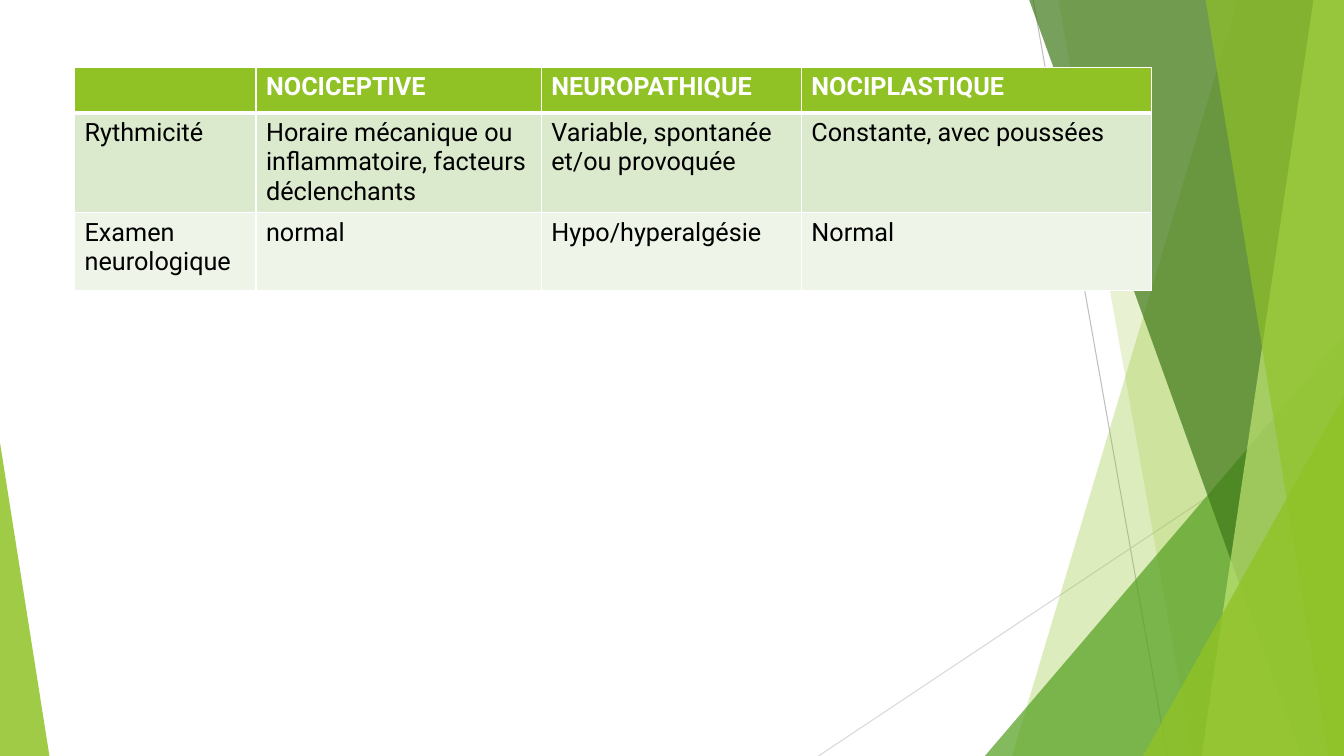
from lxml import etree
from pptx import Presentation
from pptx import util as u
from pptx.dml.color import RGBColor
from pptx.enum import shapes
from pptx.oxml import ns

WIDTH, HEIGHT = u.Inches(13.33), u.Inches(7.5)
LIME, WHITE, BLACK = "90C226", "FFFFFF", "000000"
BANDS = ["DBE9CD", "EEF4E8"]

# Positions are percentages of the slide's width and height
GUIDES = [((76.88, 0), (86.85, 100), "BFBFBF"),
          ((100, 53.73), (60.9, 100), "D9D9D9")]

# Facets reach the right edge: top x, bottom x, colour, opacity
PALE_FACETS = [(92.1, 75.3, LIME, 30), (78.75, 88.73, LIME, 20)]
DEEP_FACETS = [(76.58, 96.83, "3F7819", 70), (97.73, 89.4, "C0E474", 70),
               (89.7, 98.85, LIME, 65)]

# Corners stand on the bottom edge: left, right, top, apex, colour, opacity
GREEN_CORNER = (73.28, 100, 44.4, 1, "54A021", 72)
LIME_CORNER = (85.05, 100, 52.4, 1, LIME, 80)
LEFT_CORNER = (0, 3.68, 58.53, 0, LIME, 85)

COLUMNS = [13.5, 21.23, 19.35, 26.03]
ROWS = [6, 13.2, 10.27]
PAIN_TYPES = [
    ["", "NOCICEPTIVE", "NEUROPATHIQUE", "NOCIPLASTIQUE"],
    ["Rythmicité", "Horaire mécanique ou inflammatoire, facteurs déclenchants",
     "Variable, spontanée et/ou provoquée", "Constante, avec poussées"],
    ["Examen neurologique", "normal", "Hypo/hyperalgésie", "Normal"],
]


def across(percent):
    return round(WIDTH * percent / 100)


def down(percent):
    return round(HEIGHT * percent / 100)


def rgb(color):
    return RGBColor.from_string(color)


def paint(shape, color, opacity):
    shape.shadow.inherit = False
    shape.line.fill.background()
    shape.fill.solid()
    shape.fill.fore_color.rgb = rgb(color)
    tint = shape.fill._xPr.find(".//" + ns.qn("a:srgbClr"))
    etree.SubElement(tint, ns.qn("a:alpha"), val=str(opacity * 1000))


def add_guide(slide, start, end, color):
    guide = slide.shapes.add_connector(
        shapes.MSO_CONNECTOR.STRAIGHT, across(start[0]), down(start[1]),
        across(end[0]), down(end[1]))
    guide.line.color.rgb = rgb(color)
    guide.line.width = u.Pt(0.75)
    etree.SubElement(guide._element.spPr, ns.qn("a:effectLst"))


def add_facet(slide, top_x, bottom_x, color, opacity):
    outline = slide.shapes.build_freeform(across(top_x), 0)
    outline.add_line_segments([(WIDTH, 0), (WIDTH, HEIGHT),
                               (across(bottom_x), HEIGHT)], close=True)
    paint(outline.convert_to_shape(), color, opacity)


def add_corner(slide, left, right, top, apex, color, opacity):
    corner = slide.shapes.add_shape(
        shapes.MSO_SHAPE.ISOSCELES_TRIANGLE, across(left), down(top),
        across(right - left), down(100 - top))
    corner.adjustments[0] = apex
    paint(corner, color, opacity)


def add_border(cell, side, points):
    border = etree.SubElement(cell._tc.get_or_add_tcPr(), ns.qn("a:ln" + side),
                              w=str(u.Pt(points)))
    fill = etree.SubElement(border, ns.qn("a:solidFill"))
    etree.SubElement(fill, ns.qn("a:srgbClr"), val=WHITE)


def fill_cell(cell, wording, row):
    header = row == 0
    # Borders, with a thicker rule under the header
    for side in "LRTB":
        under_header = (row, side) in [(0, "B"), (1, "T")]
        add_border(cell, side, 3 if under_header else 1)
    cell.fill.solid()
    cell.fill.fore_color.rgb = rgb(LIME if header else BANDS[row - 1])
    # Wording
    cell.text = wording
    font = cell.text_frame.paragraphs[0].font
    font.name, font.size, font.bold = "Roboto", u.Pt(18), header
    font.color.rgb = rgb(WHITE if header else BLACK)


def add_comparison(slide, left, top):
    table = slide.shapes.add_table(
        len(ROWS), len(COLUMNS), across(left), down(top),
        across(sum(COLUMNS)), down(sum(ROWS))).table
    for column, share in zip(table.columns, COLUMNS):
        column.width = across(share)
    for row, share in enumerate(ROWS):
        table.rows[row].height = down(share)
        for column, wording in enumerate(PAIN_TYPES[row]):
            fill_cell(table.cell(row, column), wording, row)


def main():
    deck = Presentation()
    deck.slide_width, deck.slide_height = WIDTH, HEIGHT
    slide = deck.slides.add_slide(deck.slide_layouts[6])

    # Decoration, from back to front
    for guide in GUIDES:
        add_guide(slide, *guide)
    for facet in PALE_FACETS:
        add_facet(slide, *facet)
    add_corner(slide, *GREEN_CORNER)
    for facet in DEEP_FACETS:
        add_facet(slide, *facet)
    add_corner(slide, *LIME_CORNER)
    add_corner(slide, *LEFT_CORNER)

    # Comparison of the pain types
    add_comparison(slide, 5.55, 8.93)
    deck.save("out.pptx")


if __name__ == "__main__":
    main()
